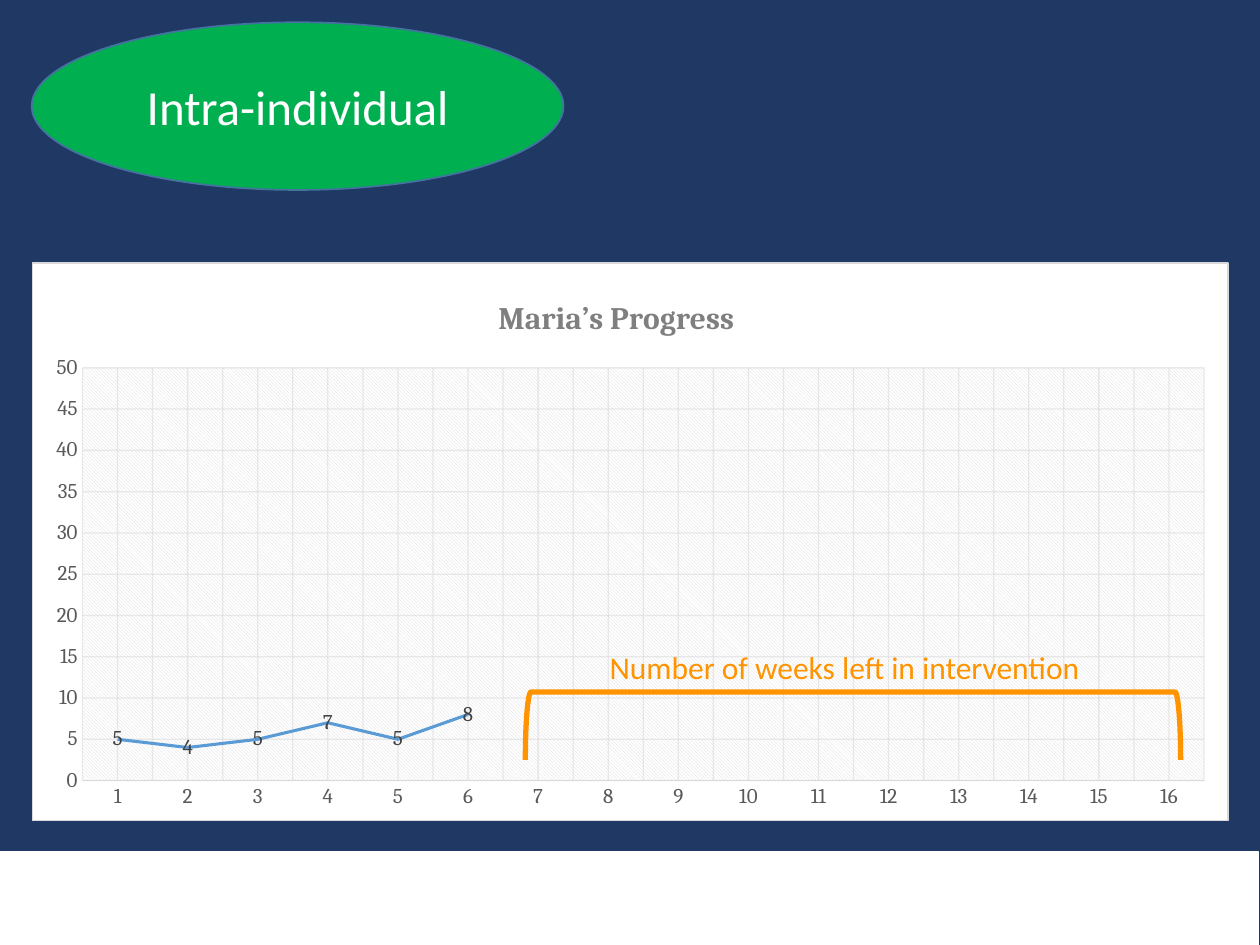
from dataclasses import dataclass

from pptx import Presentation
from pptx.chart.data import CategoryChartData
from pptx.dml.color import RGBColor
from pptx.enum.chart import XL_CHART_TYPE, XL_LABEL_POSITION, XL_MARKER_STYLE, XL_TICK_MARK
from pptx.enum.shapes import MSO_SHAPE
from pptx.enum.text import MSO_ANCHOR, MSO_AUTO_SIZE, PP_ALIGN
from pptx.oxml import parse_xml
from pptx.oxml.ns import nsdecls, qn
from pptx.util import Cm, Pt

# Content
HEADING = "Intra-individual"
CHART_TITLE = "Maria’s Progress"
NOTE = "Number of weeks left in intervention"
WEEKS = 16
SCORES = [5, 4, 5, 7, 5, 8]


@dataclass(frozen=True)
class Theme:
    navy: str = "203864"
    white: str = "FFFFFF"
    green: str = "00B050"
    outline: str = "43739E"
    orange: str = "FF9300"
    blue: str = "5B9BD5"
    rule: str = "D9D9D9"
    title: str = "7F7F7F"
    axis: str = "595959"
    label: str = "404040"
    black: str = "000000"
    text_font: str = "Calibri"
    chart_font: str = "Cambria"
    heading_size: int = 28
    note_size: int = 18
    title_size: int = 18
    chart_size: int = 12
    base_size: int = 10


THEME = Theme()


def color(value):
    return RGBColor.from_string(value)


def style_font(font, face, size, value, bold=False):
    font.name, font.size, font.bold = face, Pt(size), bold
    font.color.rgb = color(value)


def add_figure(page, kind, frame, fill, line, width):
    shape = page.shapes.add_shape(kind, *map(Cm, frame))
    shape.shadow.inherit = False
    if fill:
        shape.fill.solid()
        shape.fill.fore_color.rgb = color(fill)
    else:
        shape.fill.background()
    shape.line.color.rgb = color(line)
    shape.line.width = Pt(width)
    return shape


def write(box, text, size, value, align):
    para = box.text_frame.paragraphs[0]
    para.alignment = align
    span = para.add_run()
    span.text = text
    style_font(span.font, THEME.text_font, size, value)


def properties(content):
    return parse_xml(f'<c:spPr {nsdecls("c", "a")}>{content}</c:spPr>')


def solid(value, alpha=100):
    return (f'<a:solidFill><a:srgbClr val="{value}"><a:alpha val="{alpha * 1000}"/>'
            '</a:srgbClr></a:solidFill>')


def style_axis(axis, minor_grid):
    axis.major_tick_mark = axis.minor_tick_mark = XL_TICK_MARK.NONE
    axis.has_major_gridlines = True
    axis.has_minor_gridlines = minor_grid
    for name in ("c:majorGridlines", "c:minorGridlines"):
        for grid in axis._element.findall(qn(name)):
            grid.append(properties(f'<a:ln w="9525">{solid(THEME.rule, 54)}</a:ln>'))
    style_font(axis.tick_labels.font, THEME.chart_font, THEME.chart_size, THEME.axis)


def set_layout(parent, index, inner=False, **fractions):
    """Place a chart part by fractions of the chart's width and height."""
    for old in parent.findall(qn("c:layout")):
        parent.remove(old)
    target = '<c:layoutTarget val="inner"/>' if inner else ""
    modes = '<c:xMode val="edge"/><c:yMode val="edge"/>'
    values = "".join(f'<c:{key} val="{value}"/>' for key, value in fractions.items())
    parent.insert(index, parse_xml(
        f'<c:layout {nsdecls("c")}><c:manualLayout>{target}{modes}{values}'
        '</c:manualLayout></c:layout>'))


def add_progress_chart(page, frame):
    data = CategoryChartData()
    data.categories = [str(week) for week in range(1, WEEKS + 1)]
    data.add_series("Series 1", SCORES + [None] * (WEEKS - len(SCORES)))
    chart = page.shapes.add_chart(XL_CHART_TYPE.LINE, *map(Cm, frame), data).chart
    chart.has_legend = False
    style_font(chart.font, THEME.chart_font, THEME.base_size, THEME.black)

    # Title
    chart.has_title = True
    span = chart.chart_title.text_frame.paragraphs[0].add_run()
    span.text = CHART_TITLE
    style_font(span.font, THEME.chart_font, THEME.title_size, THEME.title, True)
    set_layout(chart.chart_title._element, 1, x=0.385, y=0.05)

    # Axes
    weeks, scores = chart.category_axis, chart.value_axis
    style_axis(weeks, minor_grid=True)
    style_axis(scores, minor_grid=False)
    weeks.format.line.color.rgb = color(THEME.rule)
    weeks.format.line.width = Pt(0.75)
    scores.minimum_scale, scores.maximum_scale, scores.major_unit = 0, 50, 5
    scores.format.line.fill.background()

    # Line and its values
    plot = chart.plots[0]
    plot.vary_by_categories = False
    series = plot.series[0]
    series.smooth = False
    series.marker.style = XL_MARKER_STYLE.NONE
    series.format.line.color.rgb = color(THEME.blue)
    series.format.line.width = Pt(1.75)
    labels = series.data_labels
    labels.show_value = True
    labels.position = XL_LABEL_POSITION.CENTER
    style_font(labels.font, THEME.chart_font, THEME.chart_size, THEME.label)

    # Hatched plot area on a white, thinly framed chart
    area = chart._chartSpace.chart.plotArea
    set_layout(area, 0, inner=True, x=0.042, y=0.188, w=0.938, h=0.74)
    area.append(properties(
        f'<a:pattFill prst="ltDnDiag"><a:fgClr><a:srgbClr val="{THEME.rule}"/></a:fgClr>'
        f'<a:bgClr><a:srgbClr val="{THEME.white}"/></a:bgClr></a:pattFill>'
        '<a:ln><a:noFill/></a:ln>'))
    chart._chartSpace.chart.addnext(properties(
        f'{solid(THEME.white)}<a:ln w="9525">{solid(THEME.rule)}</a:ln>'))


def main():
    deck = Presentation()
    deck.slide_width, deck.slide_height = Cm(25.4), Cm(19.05)
    page = deck.slides.add_slide(deck.slide_layouts[6])
    page.background.fill.solid()
    page.background.fill.fore_color.rgb = color(THEME.navy)

    # Footer band
    add_figure(page, MSO_SHAPE.RECTANGLE, (0, 17.17, 25.37, 1.88),
               THEME.white, THEME.white, 1)

    add_progress_chart(page, (0.64, 5.29, 24.13, 11.27))

    # Bracket over the remaining weeks
    bracket = add_figure(page, MSO_SHAPE.LEFT_BRACKET, (16.51, 8.03, 1.37, 13.21),
                         None, THEME.orange, 3)
    bracket.rotation = 90
    note = page.shapes.add_textbox(*map(Cm, (12.04, 12.93, 11.53, 1.02)))
    note.text_frame.word_wrap = True
    note.text_frame.auto_size = MSO_AUTO_SIZE.SHAPE_TO_FIT_TEXT
    write(note, NOTE, THEME.note_size, THEME.orange, PP_ALIGN.LEFT)

    # Heading
    heading = add_figure(page, MSO_SHAPE.OVAL, (0.64, 0.45, 10.72, 3.38),
                         THEME.green, THEME.outline, 1)
    heading.text_frame.vertical_anchor = MSO_ANCHOR.MIDDLE
    write(heading, HEADING, THEME.heading_size, THEME.white, PP_ALIGN.CENTER)

    deck.save("out.pptx")


if __name__ == "__main__":
    main()
